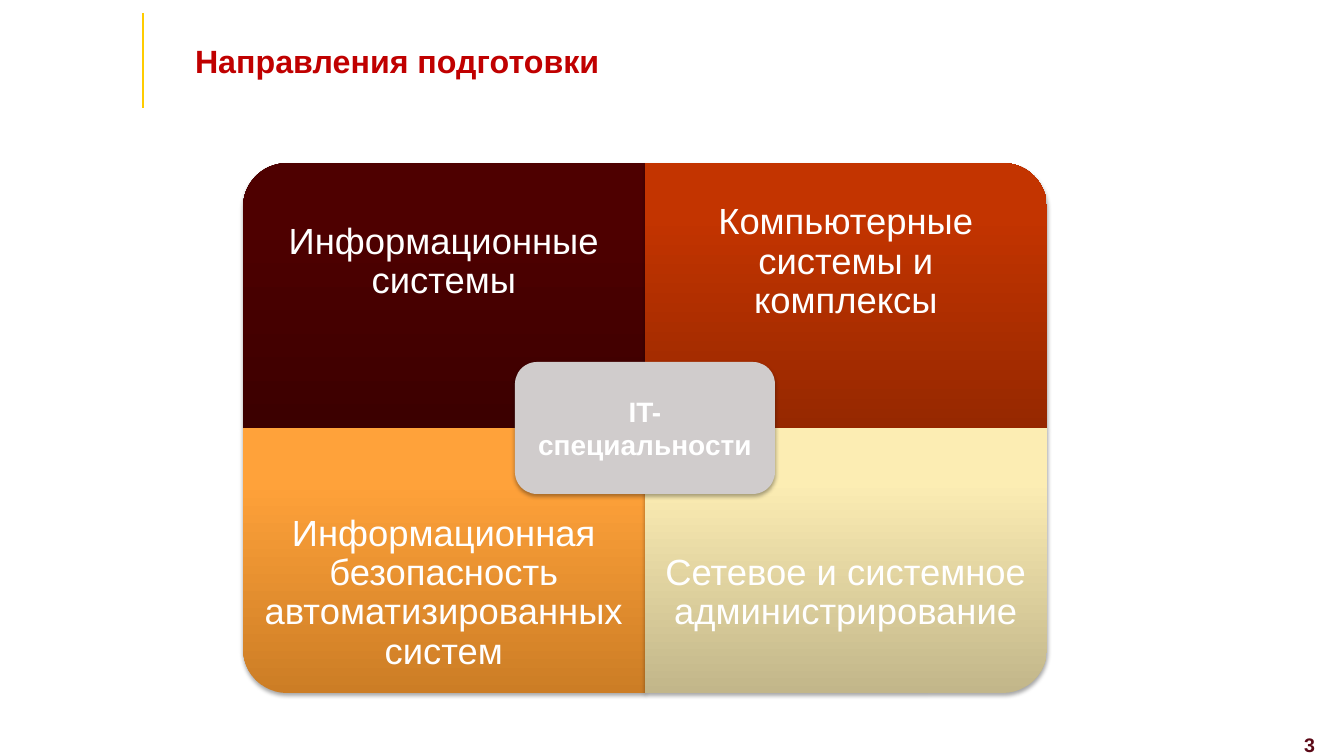
from dataclasses import dataclass

from lxml.etree import SubElement
from pptx import Presentation
from pptx.dml.color import RGBColor
from pptx.enum.shapes import MSO_CONNECTOR, MSO_SHAPE
from pptx.enum.text import MSO_ANCHOR, MSO_AUTO_SIZE, PP_ALIGN
from pptx.oxml import parse_xml
from pptx.oxml.ns import nsdecls, qn
from pptx.util import Emu, Pt

EMU_PER_PX = 914400 / 100.8


@dataclass(frozen=True)
class Theme:
    font: str = "Arial"
    title: str = "C00000"
    number: str = "5B0917"
    accent: str = "FFCC00"
    badge: str = "D0CCCC"
    text: str = "FFFFFF"
    title_size: int = 23
    quadrant_size: int = 26
    badge_size: int = 20
    number_size: int = 14


THEME = Theme()

# Label, row, column, rotation of the rounded corner, gradient from bottom to top
QUADRANTS = (
    ("Информационные системы", 0, 0, 270, ("3C0000", "4E0000", "4E0000")),
    ("Компьютерные системы и комплексы", 0, 1, 0, ("962800", "C33400", "C43400")),
    ("Информационная безопасность автоматизированных систем", 1, 0, 180,
     ("CC7D25", "FFA23A", "FFA33B")),
    ("Сетевое и системное администрирование", 1, 1, 90, ("C2B68A", "FCEDB3", "FEEEB2")),
)
MATRIX_LEFT, MATRIX_TOP = 243, 163
CELL_WIDTH, CELL_HEIGHT = 402, 265
LABEL_HEIGHT = 199
BADGE_WIDTH, BADGE_HEIGHT = 260, 132


def px(value):
    return Emu(round(value * EMU_PER_PX))


def apply_format(target, values):
    for name, value in values.items():
        setattr(target, name, value)


def write_text(shape, text, size, color, bold=False, align=PP_ALIGN.CENTER,
               anchor=MSO_ANCHOR.MIDDLE, spacing=1.0, margins=(10, 5)):
    frame = shape.text_frame
    horizontal, vertical = map(px, margins)
    apply_format(frame, {
        "text": text, "word_wrap": True, "auto_size": MSO_AUTO_SIZE.NONE,
        "vertical_anchor": anchor,
        "margin_left": horizontal, "margin_right": horizontal,
        "margin_top": vertical, "margin_bottom": vertical,
    })
    paragraph = frame.paragraphs[0]
    apply_format(paragraph, {"alignment": align, "line_spacing": spacing})
    font = paragraph.runs[0].font
    apply_format(font, {"name": THEME.font, "size": Pt(size), "bold": bold})
    font.color.rgb = RGBColor.from_string(color)


def add_shadow(shape):
    shape.shadow.inherit = False
    effects = shape.element.spPr.find(qn("a:effectLst"))
    effects.append(parse_xml(
        f'<a:outerShdw {nsdecls("a")} blurRad="40000" dist="23000" dir="5400000" '
        'rotWithShape="0"><a:srgbClr val="000000"><a:alpha val="35000"/>'
        '</a:srgbClr></a:outerShdw>'))


def fill_gradient(shape, colors):
    shape.fill.gradient()
    properties = shape.element.spPr
    stops = "".join(
        f'<a:gs pos="{position}"><a:srgbClr val="{color}"/></a:gs>'
        for position, color in zip((0, 80000, 100000), colors))
    properties.replace(properties.find(qn("a:gradFill")), parse_xml(
        f'<a:gradFill {nsdecls("a")} rotWithShape="0"><a:gsLst>{stops}</a:gsLst>'
        '<a:lin ang="16200000" scaled="0"/></a:gradFill>'))


def add_quadrant(shapes, label, row, column, rotation, colors):
    left = MATRIX_LEFT + column * CELL_WIDTH
    top = MATRIX_TOP + row * CELL_HEIGHT
    # A quarter turn swaps the sides around the same centre
    width, height = CELL_WIDTH, CELL_HEIGHT
    if rotation % 180:
        width, height = height, width
    shape = shapes.add_shape(
        MSO_SHAPE.ROUND_1_RECTANGLE,
        px(left + (CELL_WIDTH - width) / 2), px(top + (CELL_HEIGHT - height) / 2),
        px(width), px(height))
    shape.rotation = rotation
    fill_gradient(shape, colors)
    shape.line.fill.background()
    add_shadow(shape)

    # Labels keep to the outer part of each cell, clear of the badge
    label_top = top + row * (CELL_HEIGHT - LABEL_HEIGHT)
    box = shapes.add_textbox(px(left), px(label_top), px(CELL_WIDTH), px(LABEL_HEIGHT))
    write_text(box, label, THEME.quadrant_size, THEME.text, spacing=0.9, margins=(20, 20))


def add_badge(shapes, text):
    shape = shapes.add_shape(
        MSO_SHAPE.ROUNDED_RECTANGLE,
        px(MATRIX_LEFT + CELL_WIDTH - BADGE_WIDTH / 2),
        px(MATRIX_TOP + CELL_HEIGHT - BADGE_HEIGHT / 2),
        px(BADGE_WIDTH), px(BADGE_HEIGHT))
    shape.fill.solid()
    shape.fill.fore_color.rgb = RGBColor.from_string(THEME.badge)
    shape.line.fill.background()
    add_shadow(shape)
    write_text(shape, text, THEME.badge_size, THEME.text, bold=True, margins=(8, 8))


def add_accent_line(slide):
    line = slide.shapes.add_connector(
        MSO_CONNECTOR.STRAIGHT, px(143), px(13), px(143), px(108))
    line.line.width = Pt(1)
    line.line.color.rgb = RGBColor.from_string(THEME.accent)
    SubElement(line.element.spPr, qn("a:effectLst"))


def add_title(slide, text):
    title = slide.shapes.title
    apply_format(title, {"left": px(185), "top": px(5),
                         "width": px(826), "height": px(119)})
    write_text(title, text, THEME.title_size, THEME.title, bold=True,
               align=PP_ALIGN.LEFT, spacing=0.8)


def add_page_number(slide, text):
    box = slide.shapes.add_textbox(px(1212), px(728), px(113), px(28))
    write_text(box, text, THEME.number_size, THEME.number, bold=True,
               align=PP_ALIGN.RIGHT, anchor=MSO_ANCHOR.TOP)


def main():
    presentation = Presentation()
    apply_format(presentation, {"slide_width": px(1344), "slide_height": px(756)})
    slide = presentation.slides.add_slide(presentation.slide_layouts[5])

    # Header and page number
    add_accent_line(slide)
    add_page_number(slide, "3")
    add_title(slide, "Направления подготовки")

    # Matrix of specialities
    matrix = slide.shapes.add_group_shape()
    for quadrant in QUADRANTS:
        add_quadrant(matrix.shapes, *quadrant)
    add_badge(matrix.shapes, "IT-специальности")

    presentation.save("out.pptx")


if __name__ == "__main__":
    main()
